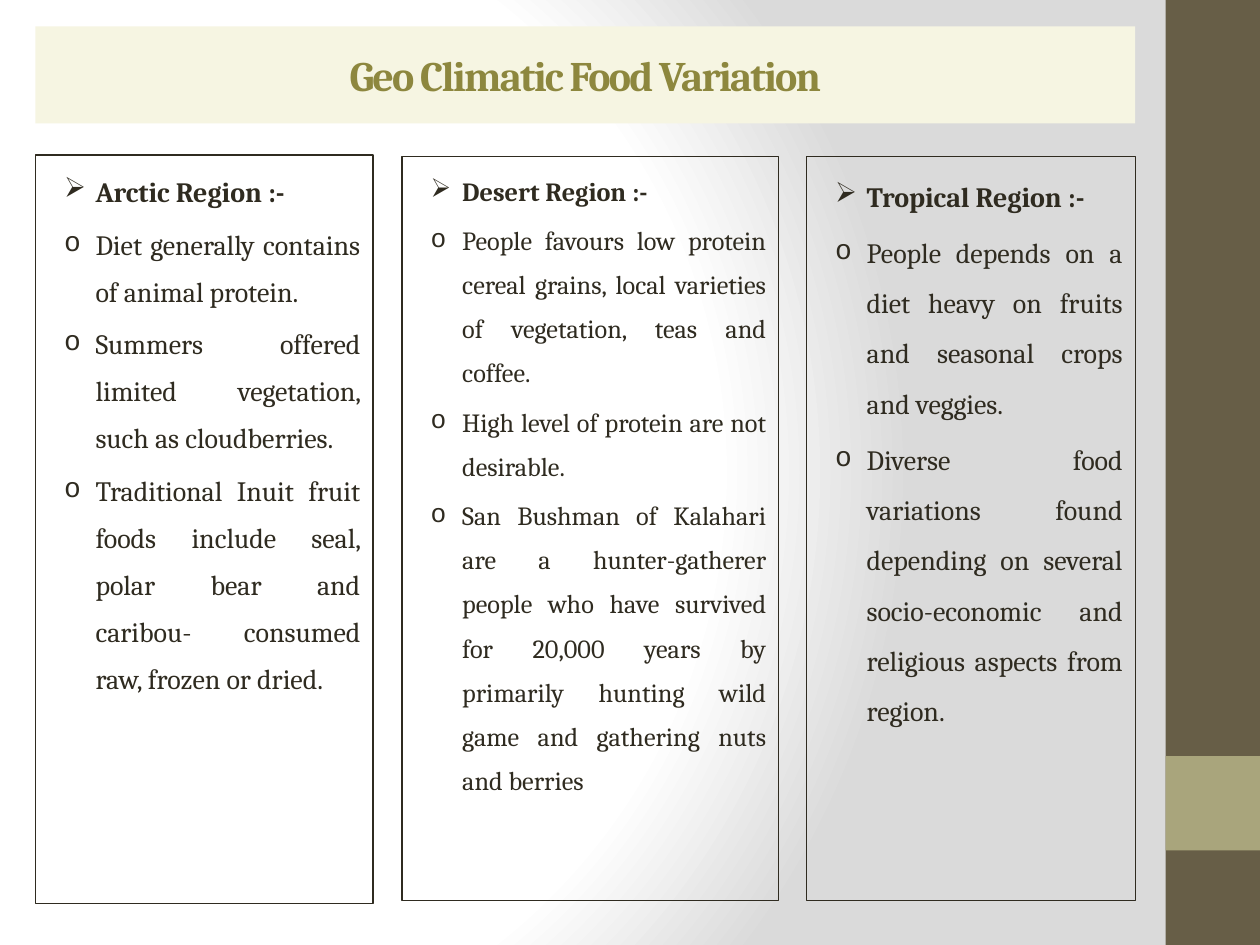
import pptx
import pptx.dml.color
import pptx.enum.shapes
import pptx.enum.text
import pptx.oxml
import pptx.oxml.ns
import pptx.util
from pptx.util import Inches

COLORS = {
    "sidebar": "675E47",
    "sidebar_block": "A9A57C",
    "title_band": "F6F5E2",
    "title": "8D873E",
    "ink": "2F2B20",
    "light": "FFFFFF",
    "shade": "DADADA",
}
FONT = "Cambria"
HEADING_BULLET, ITEM_BULLET = "➢", "o"
ALIGN = pptx.enum.text.PP_ALIGN
ANCHOR = pptx.enum.text.MSO_ANCHOR
NAMESPACE = pptx.oxml.ns.nsdecls("a")

REGIONS = [
    {
        "box": (0.28, 1.23, 2.68, 5.94), "size": 16, "line_spacing": 1.4,
        "heading": "Arctic Region :-",
        "items": [
            "Diet generally contains of animal protein.",
            "Summers offered limited vegetation, such as cloudberries.",
            "Traditional Inuit fruit foods include seal, polar bear and "
            "caribou- consumed raw, frozen or dried.",
        ],
    },
    {
        "box": (3.19, 1.24, 2.99, 5.91), "size": 15, "line_spacing": 1.4,
        "heading": "Desert Region :-",
        "items": [
            "People favours low protein cereal grains, local varieties of "
            "vegetation, teas and coffee.",
            "High level of protein are not desirable.",
            "San Bushman of Kalahari are a hunter-gatherer people who have "
            "survived for 20,000 years by primarily hunting wild game and "
            "gathering nuts and berries",
        ],
    },
    {
        "box": (6.4, 1.24, 2.61, 5.91), "size": 16, "line_spacing": 1.5,
        "heading": "Tropical Region :-",
        "items": [
            "People depends on a diet heavy on fruits and seasonal crops "
            "and veggies.",
            "Diverse food variations found depending on several "
            "socio-economic and religious aspects from region.",
        ],
    },
]


def rgb(name):
    return pptx.dml.color.RGBColor.from_string(COLORS[name])


def apply(target, values):
    for attribute, value in values.items():
        setattr(target, attribute, value)


class SlideStyle:
    def __init__(self, slide):
        self.slide = slide

    def background(self):
        """Fill with a circular gradient centred on the right edge."""
        fill = self.slide.background.fill
        fill.gradient()
        gradient = self.slide.background._cSld.bg.bgPr.find(
            pptx.oxml.ns.qn("a:gradFill"))
        for child in list(gradient):
            gradient.remove(child)
        stops = "".join(
            f'<a:gs pos="{percent * 1000}"><a:srgbClr val="{COLORS[name]}"/></a:gs>'
            for percent, name in ((0, "light"), (75, "light"), (100, "shade")))
        gradient.append(pptx.oxml.parse_xml(
            f"<a:gsLst {NAMESPACE}>{stops}</a:gsLst>"))
        gradient.append(pptx.oxml.parse_xml(
            f'<a:path {NAMESPACE} path="circle"><a:fillToRect l="20000" '
            f't="50000" r="100000" b="50000"/></a:path>'))

    def rectangle(self, box, fill=None, line=None):
        shape = self.slide.shapes.add_shape(
            pptx.enum.shapes.MSO_SHAPE.RECTANGLE, *map(Inches, box))
        shape.shadow.inherit = False
        if fill:
            shape.fill.solid()
            shape.fill.fore_color.rgb = rgb(fill)
        else:
            shape.fill.background()
        if line:
            shape.line.color.rgb = rgb(line)
            shape.line.width = pptx.util.Pt(0.75)
        else:
            shape.line.fill.background()
        return shape

    def run(self, paragraph, text, size, color, bold):
        run = paragraph.add_run()
        run.text = text
        apply(run.font, {"name": FONT, "size": pptx.util.Pt(size), "bold": bold})
        run.font.color.rgb = rgb(color)
        return run

    def title(self, text, box):
        title = self.slide.shapes.title
        apply(title, dict(zip(("left", "top", "width", "height"),
                              map(Inches, box))))
        title.fill.solid()
        title.fill.fore_color.rgb = rgb("title_band")
        apply(title.text_frame, {"vertical_anchor": ANCHOR.MIDDLE,
                                 "word_wrap": True})
        paragraph = title.text_frame.paragraphs[0]
        paragraph.alignment = ALIGN.CENTER
        run = self.run(paragraph, text, 24, "title", True)
        run.font._element.set("spc", "-100")

    def bullet(self, paragraph, character):
        properties = paragraph._p.get_or_add_pPr()
        properties.set("marL", str(Inches(0.38)))
        properties.set("indent", str(Inches(-0.25)))
        if character == ITEM_BULLET:
            properties.append(pptx.oxml.parse_xml(
                f'<a:buFont {NAMESPACE} typeface="Courier New"/>'))
        properties.append(pptx.oxml.parse_xml(
            f'<a:buChar {NAMESPACE} char="{character}"/>'))

    def region(self, box, size, line_spacing, heading, items):
        frame = self.rectangle(box, line="ink").text_frame
        apply(frame, {"vertical_anchor": ANCHOR.TOP, "word_wrap": True})
        for index, text in enumerate([heading, *items]):
            is_heading = index == 0
            paragraph = frame.paragraphs[0] if is_heading else frame.add_paragraph()
            apply(paragraph, {
                "alignment": ALIGN.JUSTIFY,
                "line_spacing": line_spacing,
                "space_before": pptx.util.Pt(0.2 * size),
            })
            self.bullet(paragraph, HEADING_BULLET if is_heading else ITEM_BULLET)
            self.run(paragraph, text, size, "ink", is_heading)


def main():
    deck = pptx.Presentation()
    apply(deck, {"slide_width": Inches(10), "slide_height": Inches(7.5)})
    style = SlideStyle(deck.slides.add_slide(deck.slide_layouts[5]))
    style.background()
    style.rectangle((9.25, 0, 0.75, 7.5), fill="sidebar")
    style.rectangle((9.25, 6, 0.75, 0.75), fill="sidebar_block")
    style.title("Geo Climatic Food Variation", (0.28, 0.21, 8.73, 0.77))
    for region in REGIONS:
        style.region(**region)
    deck.save("out.pptx")


if __name__ == "__main__":
    main()
